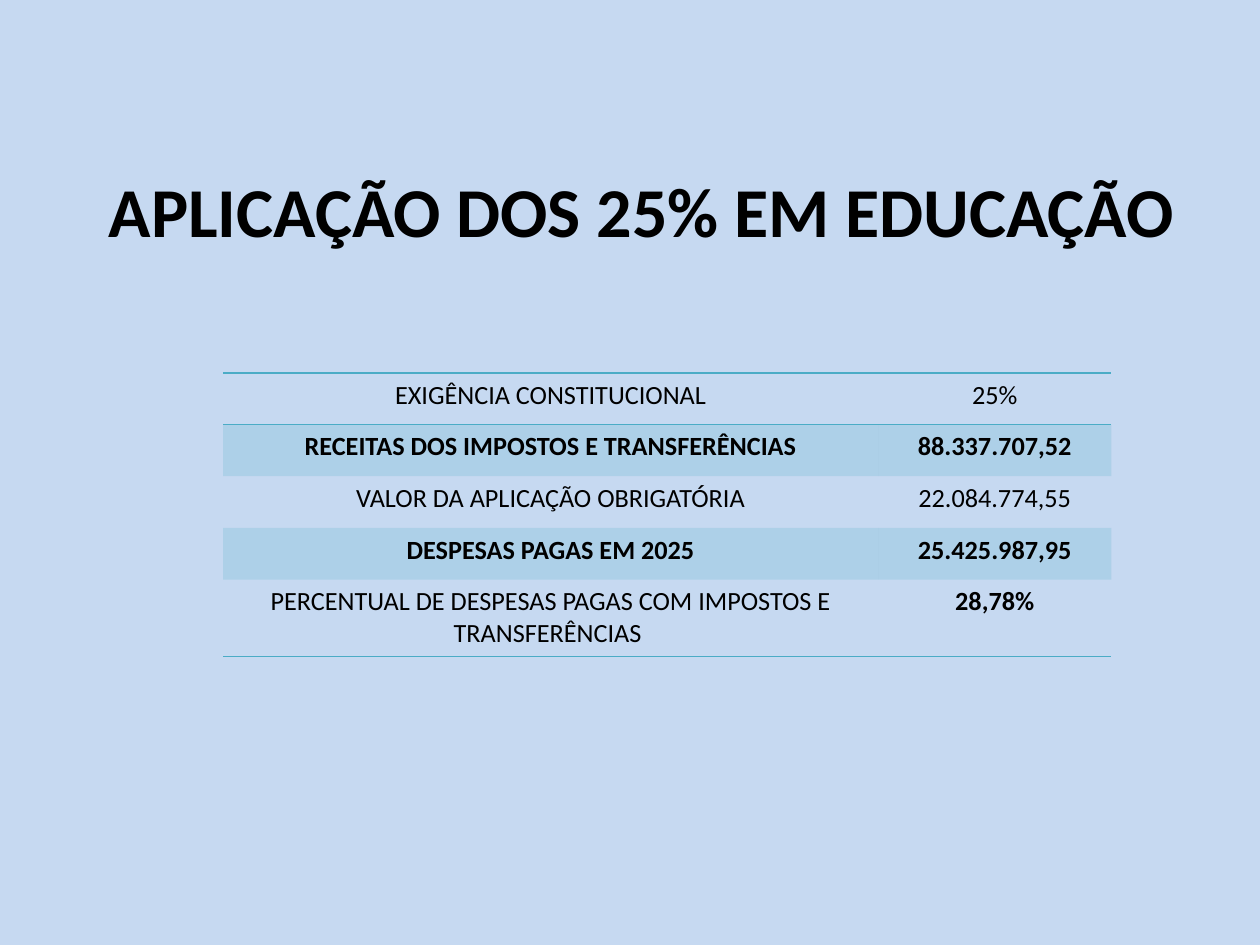
import pptx
import pptx.dml.color
import pptx.enum.text
import pptx.oxml
import pptx.oxml.ns
import pptx.util
from pptx.util import Inches

RGBColor = pptx.dml.color.RGBColor
BACK = RGBColor(0xC6, 0xD9, 0xF1)
BLACK = RGBColor(0, 0, 0)
WHITE = RGBColor(0xFF, 0xFF, 0xFF)
TEAL = RGBColor(0x4B, 0xAC, 0xC6)

PLAIN_STYLE = "{2D5ABB26-0587-4C30-8999-92F81FD0307C}"
TITLE = "APLICAÇÃO DOS 25% EM EDUCAÇÃO"
# label, value, label bold, value bold
ROWS = [
    ("EXIGÊNCIA CONSTITUCIONAL", "25%", False, False),
    ("RECEITAS DOS IMPOSTOS E TRANSFERÊNCIAS", "88.337.707,52", True, True),
    ("VALOR DA APLICAÇÃO OBRIGATÓRIA", "22.084.774,55", False, False),
    ("DESPESAS PAGAS EM 2025", "25.425.987,95", True, True),
    ("PERCENTUAL DE DESPESAS PAGAS COM IMPOSTOS E TRANSFERÊNCIAS ",
     "28,78%", False, True),
]


def write(frame, text, size, bold):
    """Put one centred run in the frame and return it."""
    para = frame.paragraphs[0]
    para.alignment = pptx.enum.text.PP_ALIGN.CENTER
    run = para.add_run()
    run.text = text
    look = {"name": "Calibri", "size": pptx.util.Pt(size), "bold": bold}
    for key, value in look.items():
        setattr(run.font, key, value)
    run.font.color.rgb = BLACK
    return run


def line_xml(tag, width, color):
    space = pptx.oxml.ns.nsdecls("a")
    return pptx.oxml.parse_xml(
        f'<a:{tag} {space} w="{int(pptx.util.Pt(width))}"><a:solidFill>'
        f'<a:srgbClr val="{color}"/></a:solidFill></a:{tag}>')


def add_title(slide, left, top, width, height):
    title = slide.shapes.title
    box = {"left": left, "top": top, "width": width, "height": height}
    for key, value in box.items():
        setattr(title, key, value)
    frame = title.text_frame
    frame.word_wrap = True
    frame.vertical_anchor = pptx.enum.text.MSO_ANCHOR.MIDDLE
    run = write(frame, TITLE, 40, True)
    run.font._element.insert(0, line_xml("ln", 0.75, WHITE))


def shade(cell):
    """Fill the cell with teal at 20% opacity."""
    cell.fill.solid()
    cell.fill.fore_color.rgb = TEAL
    color = cell._tc.tcPr.find(".//" + pptx.oxml.ns.qn("a:srgbClr"))
    color.append(pptx.oxml.parse_xml(
        f'<a:alpha {pptx.oxml.ns.nsdecls("a")} val="20000"/>'))


def add_grid(slide, left, top, width, height):
    count = len(ROWS)
    frame = slide.shapes.add_table(count, 2, left, top, width, height)
    table = frame.table
    table.first_row = False
    table._tbl.tblPr.find(pptx.oxml.ns.qn("a:tableStyleId")).text = PLAIN_STYLE
    table.columns[0].width = Inches(5.2)
    table.columns[1].width = width - Inches(5.2)
    edges = {0: ("lnT", "lnB"), count - 1: ("lnB",)}
    for i, (label, value, *bolds) in enumerate(ROWS):
        table.rows[i].height = Inches(0.41)
        for cell, text, bold in zip(table.rows[i].cells, (label, value), bolds):
            write(cell.text_frame, text, 15, bold)
            if i % 2:
                shade(cell)
            else:
                cell.fill.background()
            props = cell._tc.get_or_add_tcPr()
            for k, tag in enumerate(edges.get(i, ())):
                props.insert(k, line_xml(tag, 1, TEAL))
    table.rows[count - 1].height = Inches(0.61)


def main():
    deck = pptx.Presentation()
    deck.slide_width, deck.slide_height = Inches(10), Inches(7.5)
    slide = deck.slides.add_slide(deck.slide_layouts[5])
    slide.background.fill.solid()
    slide.background.fill.fore_color.rgb = BACK
    add_title(slide, Inches(0.59), Inches(0.76), Inches(9), Inches(1.81))
    add_grid(slide, Inches(1.77), Inches(2.96), Inches(7.05), Inches(2.22))
    deck.save("out.pptx")


if __name__ == "__main__":
    main()
